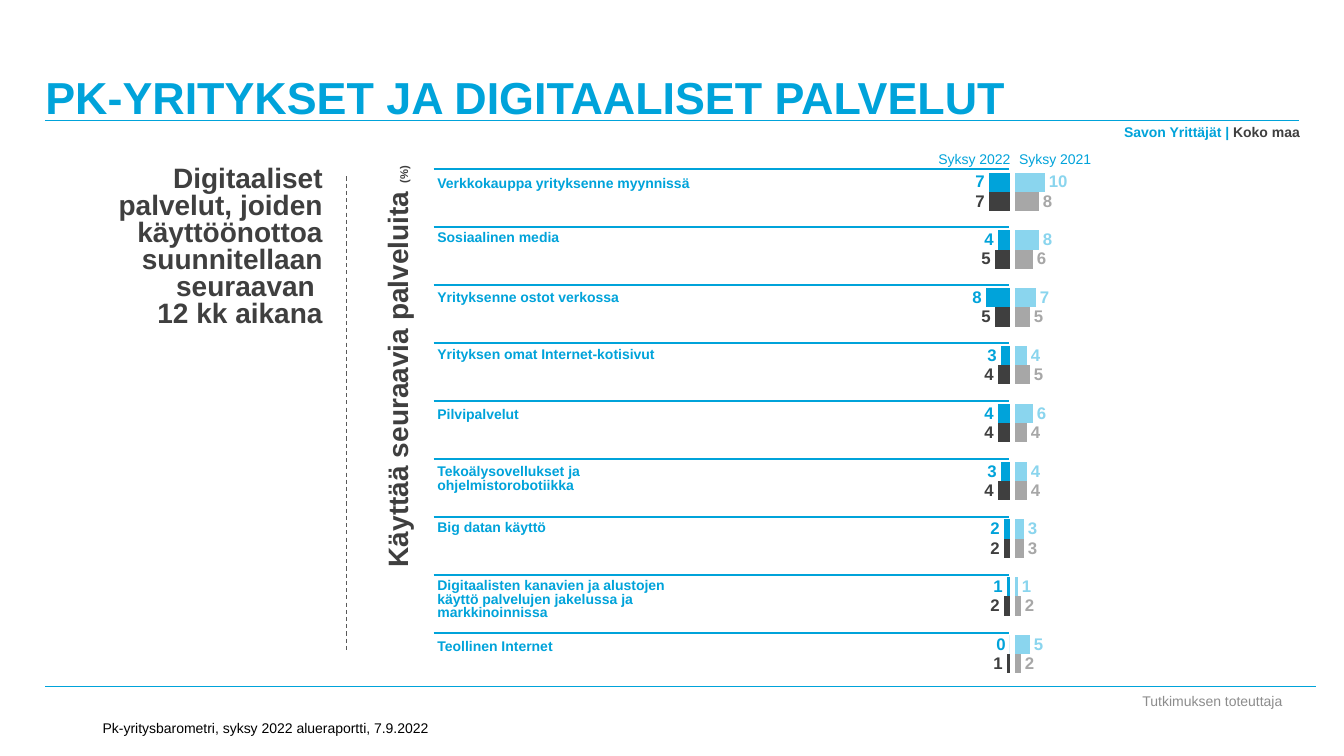
from lxml import etree
from pptx import Presentation
from pptx.chart.data import CategoryChartData
from pptx.dml.color import RGBColor
from pptx.enum.chart import XL_CHART_TYPE, XL_LABEL_POSITION
from pptx.enum.dml import MSO_LINE
from pptx.enum.shapes import MSO_CONNECTOR
from pptx.enum.text import MSO_ANCHOR, PP_ALIGN
from pptx.oxml.ns import qn
from pptx.util import Inches, Pt

BARS = XL_CHART_TYPE.BAR_CLUSTERED
OUTSIDE = XL_LABEL_POSITION.OUTSIDE_END
DASH = MSO_LINE.DASH
STRAIGHT = MSO_CONNECTOR.STRAIGHT
TOP, MIDDLE, BOTTOM = MSO_ANCHOR.TOP, MSO_ANCHOR.MIDDLE, MSO_ANCHOR.BOTTOM
LEFT, CENTER, RIGHT = PP_ALIGN.LEFT, PP_ALIGN.CENTER, PP_ALIGN.RIGHT

FONT = "Arial"
COLORS = {
    "blue": "00A3DA",
    "dark": "3F3F3F",
    "light_blue": "8AD5EE",
    "gray": "A7A7A7",
    "footer": "8C8C8C",
    "dash": "595959",
    "black": "000000",
}

TITLE = "PK-YRITYKSET JA DIGITAALISET PALVELUT"
INTRO = "Digitaaliset palvelut, joiden käyttöönottoa suunnitellaan\nseuraavan \n12 kk aikana"
SERVICES = [
    ("Verkkokauppa yrityksenne myynnissä", 0.03, 0.24),
    ("Sosiaalinen media", 0, 0.24),
    ("Yrityksenne ostot verkossa", 0.02, 0.37),
    ("Yrityksen omat Internet-kotisivut", 0.01, 0.24),
    ("Pilvipalvelut", 0.03, 0.37),
    ("Tekoälysovellukset ja \nohjelmistorobotiikka", 0.02, 0.37),
    ("Big datan käyttö", 0, 0.24),
    ("Digitaalisten kanavien ja alustojen \nkäyttö palvelujen jakelussa ja markkinoinnissa", 0, 0.5),
    ("Teollinen Internet", 0.03, 0.24),
]
SURVEYS = [
    {"left": 6.99, "mirrored": True, "series": [
        ("Series 1", "blue", (7, 4, 8, 3, 4, 3, 2, 1, 0)),
        ("Series 2", "dark", (7, 5, 5, 4, 4, 4, 2, 2, 1))]},
    {"left": 10.01, "mirrored": False, "series": [
        ("Series 1", "light_blue", (10, 8, 7, 4, 6, 4, 3, 1, 5)),
        ("Series 2", "gray", (8, 6, 5, 5, 4, 4, 3, 2, 2))]},
]
PLOT_AREA = {"x": 0.018, "y": 0.033, "w": 0.948, "h": 0.965}
FIRST_RULE, ROW_STEP = 1.68, 0.575
FRAME_RULES = [(0.45, 12.88, 1.2), (0.45, 13.05, 6.81), (0.56, 12.78, 1.2)]


def rgb(name):
    return RGBColor.from_string(COLORS[name])


def add_text(slide, text, left, top, width, height, *, size=10, color="blue", bold=False,
             align=LEFT, anchor=TOP, spacing=None, rotation=0, inset=None, tail=None):
    box = slide.shapes.add_textbox(Inches(left), Inches(top), Inches(width), Inches(height))
    box.rotation = rotation
    frame = box.text_frame
    frame.word_wrap = True
    frame.vertical_anchor = anchor
    if inset is not None:
        frame.margin_left = frame.margin_right = Inches(inset)
        frame.margin_top = frame.margin_bottom = Inches(inset)
    paragraph = frame.paragraphs[0]
    paragraph.alignment = align
    if spacing:
        paragraph.line_spacing = spacing
    pieces = [(text, size, color)] + ([tail] if tail else [])
    for words, points, shade in pieces:
        for number, row in enumerate(words.split("\n")):
            if number:
                paragraph.add_line_break()
            run = paragraph.add_run()
            run.text = row
            run.font.name = FONT
            run.font.size = Pt(points)
            run.font.bold = bold
            run.font.color.rgb = rgb(shade)


def add_line(slide, x1, y1, x2, y2, color="blue", width=0.75, dash=None):
    line = slide.shapes.add_connector(STRAIGHT, Inches(x1), Inches(y1), Inches(x2), Inches(y2))
    line.line.color.rgb = rgb(color)
    line.line.width = Pt(width)
    if dash:
        line.line.dash_style = dash
    etree.SubElement(line._element.spPr, qn("a:effectLst"))


def set_plot_area(chart):
    plot_area = chart._chartSpace.chart.plotArea
    layout = plot_area.find(qn("c:layout"))
    if layout is None:
        layout = etree.Element(qn("c:layout"))
        plot_area.insert(0, layout)
    manual = etree.SubElement(layout, qn("c:manualLayout"))
    settings = [("layoutTarget", "inner"), ("xMode", "edge"), ("yMode", "edge")]
    for tag, value in settings + list(PLOT_AREA.items()):
        etree.SubElement(manual, qn(f"c:{tag}")).set("val", str(value))


def add_survey(slide, survey):
    data = CategoryChartData(number_format="#,##0")
    data.categories = [str(number) for number in range(1, len(SERVICES) + 1)]
    for name, _, values in survey["series"]:
        data.add_series(name, values)
    chart = slide.shapes.add_chart(BARS, Inches(survey["left"]), Inches(1.44),
                                   Inches(3.13), Inches(5.35), data).chart
    chart.has_title = False
    chart.has_legend = False
    chart.font.name = FONT
    chart.font.size = Pt(20)
    chart.font.color.rgb = rgb("black")
    chart.category_axis.reverse_order = True
    chart.value_axis.reverse_order = survey["mirrored"]
    chart.value_axis.minimum_scale = 0
    chart.value_axis.maximum_scale = 100
    chart.value_axis.has_major_gridlines = False
    chart.category_axis.visible = False
    chart.value_axis.visible = False
    plot = chart.plots[0]
    plot.gap_width = 101
    plot.overlap = 0
    plot.vary_by_categories = False
    for series, (_, color, _) in zip(plot.series, survey["series"]):
        series.format.fill.solid()
        series.format.fill.fore_color.rgb = rgb(color)
        labels = series.data_labels
        labels.show_value = True
        labels.position = OUTSIDE
        labels.number_format = "#,##0"
        labels.number_format_is_linked = False
        labels.font.name = FONT
        labels.font.size = Pt(12)
        labels.font.bold = True
        labels.font.color.rgb = rgb(color)
    set_plot_area(chart)


def main():
    deck = Presentation()
    deck.slide_width, deck.slide_height = Inches(13.33), Inches(7.5)
    slide = deck.slides.add_slide(deck.slide_layouts[6])

    add_text(slide, "Tutkimuksen toteuttaja", 11.16, 6.82, 1.73, 0.26,
             color="footer", align=CENTER, anchor=MIDDLE)
    add_text(slide, TITLE, 0.45, 0, 12.3, 1.22, size=32, bold=True, anchor=BOTTOM, inset=0)
    add_text(slide, "Pk-yritysbarometri, syksy 2022 alueraportti, 7.9.2022", 0.92, 7, 4.17, 0.35,
             color="black", anchor=BOTTOM)
    for start, end, y in FRAME_RULES:
        add_line(slide, start, y, end, y)
    add_text(slide, "Käyttää seuraavia palveluita ", 1.51, 3.76, 4.86, 0.44, size=20, color="dark",
             bold=True, align=RIGHT, rotation=270, tail=("(%)", 8, "dark"))
    add_text(slide, "Savon Yrittäjät | ", 8.13, 1.18, 4.86, 0.27, bold=True, align=RIGHT,
             tail=("Koko maa", 10, "dark"))
    add_line(slide, 3.44, 1.75, 3.44, 6.47, color="dash", dash=DASH)

    for survey in SURVEYS:
        add_survey(slide, survey)
    for row, (service, offset, height) in enumerate(SERVICES):
        y = FIRST_RULE + row * ROW_STEP
        add_line(slide, 4.3, y, 10.01, y, width=1.25)
        add_text(slide, service, 4.24, y + offset, 3.19, height, bold=True, spacing=0.8)

    add_text(slide, INTRO, 0.43, 1.61, 2.87, 1.72, size=20, color="dark", bold=True,
             align=RIGHT, spacing=0.8)
    add_text(slide, "Syksy 2021", 10.01, 1.44, 1.03, 0.27)
    add_text(slide, "Syksy 2022", 9.09, 1.44, 1.03, 0.27, align=RIGHT)
    deck.save("out.pptx")


if __name__ == "__main__":
    main()
